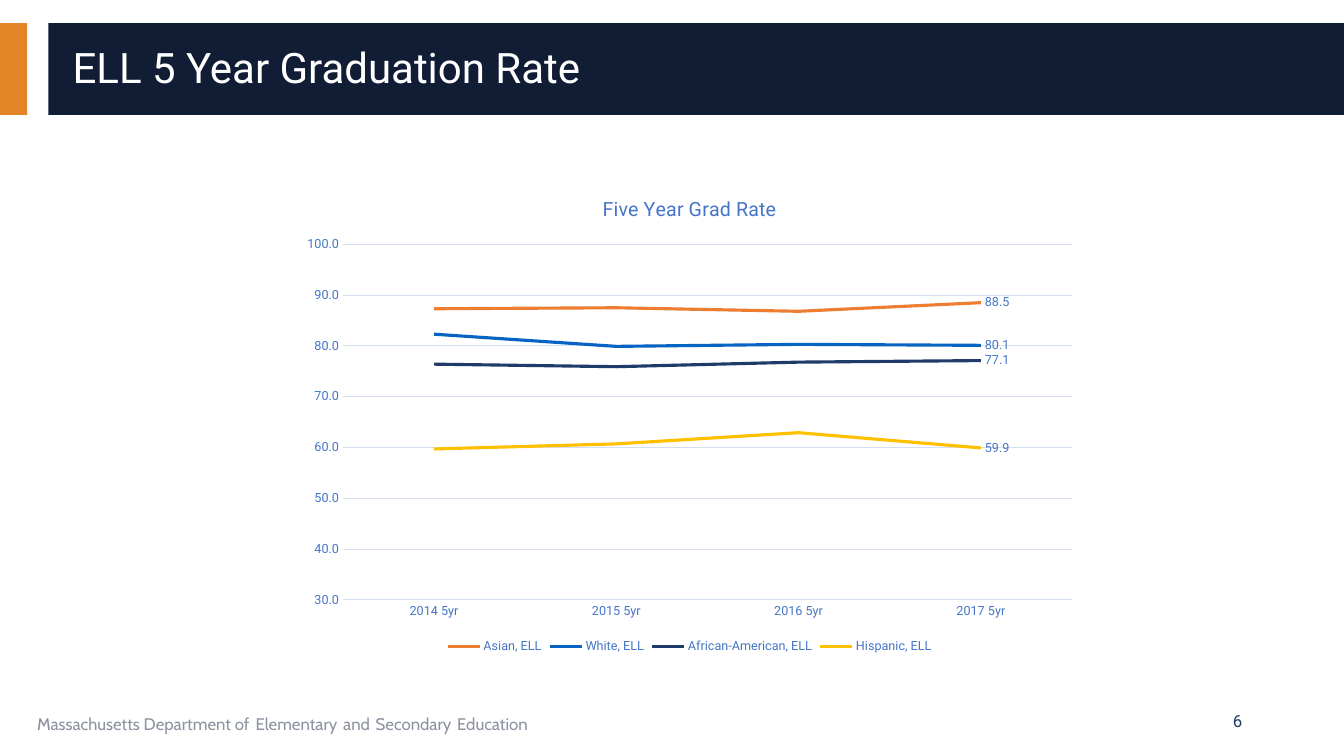
"""Build the ELL five-year graduation rate slide."""
from dataclasses import dataclass

from pptx import Presentation
from pptx import util as u
from pptx.chart.data import CategoryChartData
from pptx.dml.color import RGBColor
from pptx.enum import chart as ch, shapes, text

COLORS = {
    "orange": "E38526", "navy": "101D35", "blue": "203B6A", "gray": "8D92A1",
    "white": "FFFFFF", "label": "4575C7", "grid": "D4DFF2", "asian": "ED7D31",
    "white_ell": "0563C1", "hispanic": "FFC000",
}
YEARS = [f"{year} 5yr" for year in range(2014, 2018)]


@dataclass
class Box:
    """Position and size in inches."""
    left: float
    top: float
    width: float
    height: float

    def lengths(self) -> list:
        """Return the four lengths in slide units."""
        return [u.Inches(n) for n in (self.left, self.top, self.width, self.height)]


@dataclass
class Band:
    """A filled header rectangle."""
    box: Box
    color: str


@dataclass
class Group:
    """A line of the chart."""
    name: str
    rates: list[float]
    color: str


BANDS = [
    Band(Box(0, 0.23, 0.27, 0.91), "orange"),
    Band(Box(0.48, 0.23, 12.86, 0.91), "navy"),
]
GROUPS = [
    Group("Asian, ELL", [87.3, 87.5, 86.8, 88.5], "asian"),
    Group("White, ELL", [82.3, 79.9, 80.3, 80.1], "white_ell"),
    Group("African-American, ELL", [76.4, 75.9, 76.8, 77.1], "blue"),
    Group("Hispanic, ELL", [59.7, 60.7, 62.9, 59.9], "hispanic"),
]
FOOTER = ["Massachusetts Department of", "Elementary", "and", "Secondary", "Education"]


def rgb(color: str) -> RGBColor:
    """Look up a named color."""
    return RGBColor.from_string(COLORS[color])


def apply(target, values: dict) -> None:
    """Set each attribute in the dict on the target."""
    for key, value in values.items():
        setattr(target, key, value)


def set_font(font, size: float, color: str, name: str = "Roboto") -> None:
    """Format a font."""
    apply(font, {"size": u.Pt(size), "name": name, "bold": False})
    font.color.rgb = rgb(color)


def set_line(line, color: str, width: float) -> None:
    """Format a line."""
    line.color.rgb = rgb(color)
    line.width = u.Pt(width)


def add_run(p, content: str, size: float, color: str, name: str = "Roboto") -> None:
    """Append a formatted run."""
    r = p.add_run()
    r.text = content
    set_font(r.font, size, color, name)


def add_band(s, band: Band) -> None:
    """Draw a header rectangle."""
    sp = s.shapes.add_shape(shapes.MSO_SHAPE.RECTANGLE, *band.box.lengths())
    sp.shadow.inherit = False
    sp.fill.solid()
    sp.fill.fore_color.rgb = rgb(band.color)
    sp.line.fill.background()


def add_text(s, box: Box):
    """Add a vertically centered text box and return its paragraph."""
    tf = s.shapes.add_textbox(*box.lengths()).text_frame
    apply(tf, {"word_wrap": True, "vertical_anchor": text.MSO_ANCHOR.MIDDLE})
    return tf.paragraphs[0]


def add_title(s, box: Box, content: str) -> None:
    """Place the title in front of the header bands."""
    sp = s.shapes.title
    s.shapes.element.append(sp.element)
    apply(sp, dict(zip(("left", "top", "width", "height"), box.lengths())))
    tf = sp.text_frame
    apply(tf, {"word_wrap": True, "vertical_anchor": text.MSO_ANCHOR.MIDDLE,
               "auto_size": text.MSO_AUTO_SIZE.NONE})
    p = tf.paragraphs[0]
    apply(p, {"alignment": text.PP_ALIGN.LEFT, "line_spacing": 0.9})
    add_run(p, content, 30, "white")


def add_rate_chart(s, box: Box) -> None:
    """Draw the graduation rate line chart."""
    data = CategoryChartData(number_format="0.0")
    data.categories = YEARS
    for group in GROUPS:
        data.add_series(group.name, group.rates)
    chart = s.shapes.add_chart(ch.XL_CHART_TYPE.LINE, *box.lengths(), data).chart
    set_font(chart.font, 10, "blue")
    p = chart.chart_title.text_frame.paragraphs[0]
    add_run(p, "Five Year Grad Rate", 14, "label")

    chart.has_legend = True
    apply(chart.legend, {"position": ch.XL_LEGEND_POSITION.BOTTOM,
                         "include_in_layout": False})
    set_font(chart.legend.font, 9, "label")

    for axis in (chart.category_axis, chart.value_axis):
        apply(axis, {"major_tick_mark": ch.XL_TICK_MARK.NONE,
                     "minor_tick_mark": ch.XL_TICK_MARK.NONE})
        set_font(axis.tick_labels.font, 9, "label")
    set_line(chart.category_axis.format.line, "grid", 0.75)
    axis = chart.value_axis
    apply(axis, {"minimum_scale": 30, "maximum_scale": 100, "major_unit": 10,
                 "has_major_gridlines": True})
    apply(axis.tick_labels, {"number_format": "0.0", "number_format_is_linked": False})
    axis.format.line.fill.background()
    set_line(axis.major_gridlines.format.line, "grid", 0.75)

    chart.plots[0].vary_by_categories = False
    for series, group in zip(chart.plots[0].series, GROUPS):
        series.smooth = False
        series.marker.style = ch.XL_MARKER_STYLE.NONE
        set_line(series.format.line, group.color, 2.25)
        label = series.points[len(YEARS) - 1].data_label
        label.position = ch.XL_LABEL_POSITION.RIGHT
        set_font(label.font, 9, "label")


def main() -> None:
    """Build and save the slide."""
    prs = Presentation()
    apply(prs, {"slide_width": u.Inches(13.33), "slide_height": u.Inches(7.5)})
    s = prs.slides.add_slide(prs.slide_layouts[5])
    for band in BANDS:
        add_band(s, band)
    p = add_text(s, Box(0.27, 6.95, 8.44, 0.4))
    for i, word in enumerate(FOOTER):
        if i:
            add_run(p, " ", 18, "blue", "Cabin")
        add_run(p, word, 12, "gray", "Cabin")
    p = add_text(s, Box(9.42, 6.95, 3, 0.4))
    p.alignment = text.PP_ALIGN.RIGHT
    add_run(p, "6", 12, "blue")
    add_title(s, Box(0.62, 0.39, 12.44, 0.6), "ELL 5 Year Graduation Rate")
    add_rate_chart(s, Box(2.89, 1.75, 7.9, 4.78))
    prs.save("out.pptx")


if __name__ == "__main__":
    main()
